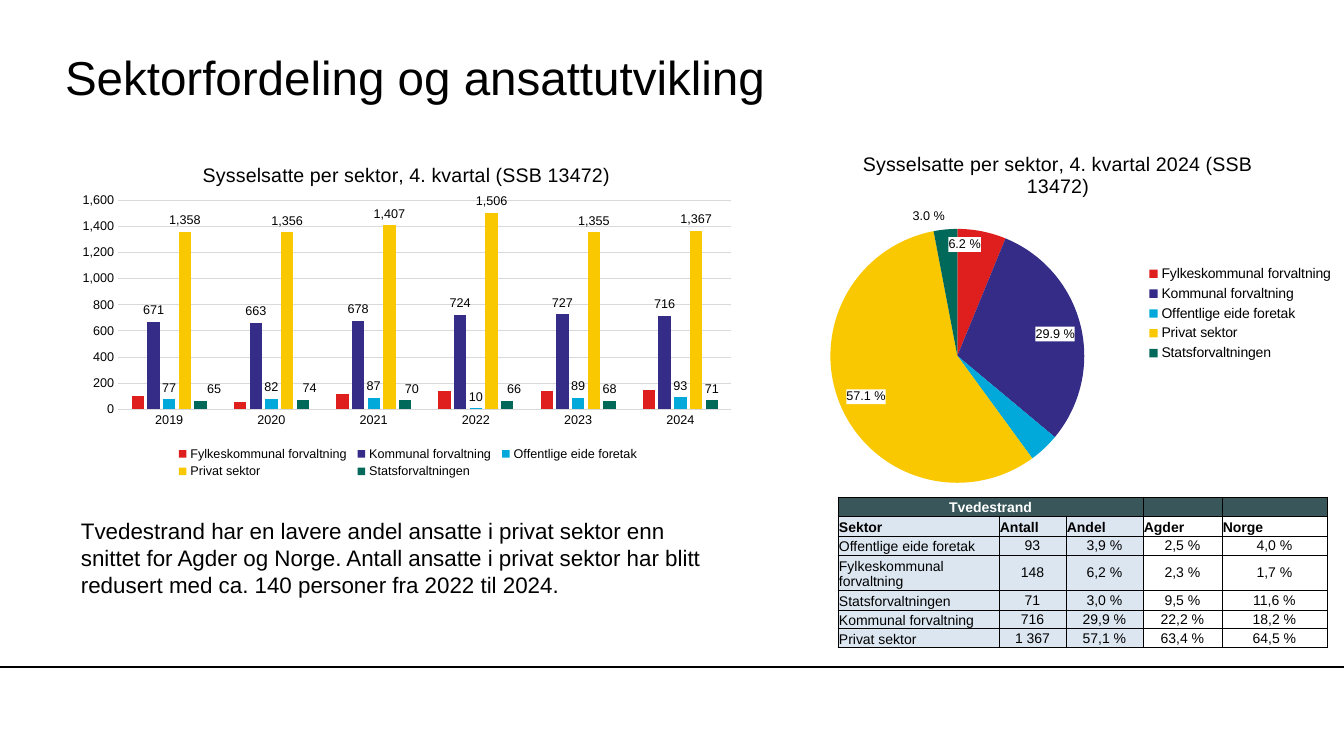
from copy import deepcopy
from dataclasses import dataclass

from pptx import Presentation
from pptx.chart.chart import Chart
from pptx.chart.data import CategoryChartData
from pptx.dml.color import RGBColor
from pptx.enum.chart import XL_CHART_TYPE, XL_LABEL_POSITION, XL_LEGEND_POSITION, XL_TICK_MARK
from pptx.enum.shapes import MSO_CONNECTOR
from pptx.enum.text import MSO_ANCHOR, PP_ALIGN
from pptx.oxml import parse_xml
from pptx.oxml.ns import nsdecls, qn
from pptx.oxml.xmlchemy import OxmlElement
from pptx.util import Emu, Pt

PIXEL = 914400 / 100.8
FONT = "Arial"
COLORS = {"text": "000000", "white": "FFFFFF", "grid": "D9D9D9", "header": "39575B", "tint": "DCE6F1"}
SECTORS = {
    "Fylkeskommunal forvaltning": "DF1F1D",
    "Kommunal forvaltning": "342C86",
    "Offentlige eide foretak": "00A9DA",
    "Privat sektor": "FAC800",
    "Statsforvaltningen": "00695A",
}
YEARS = ["2019", "2020", "2021", "2022", "2023", "2024"]
EMPLOYED = [
    [100, 60, 120, 140, 140, 150],
    [671, 663, 678, 724, 727, 716],
    [77, 82, 87, 10, 89, 93],
    [1358, 1356, 1407, 1506, 1355, 1367],
    [65, 74, 70, 66, 68, 71],
]
STATE_LABEL_SHIFTS = [0.02, 0.01, 0.01, 0.01]
SHARES = [6.2, 29.9, 3.9, 57.1, 3]
TABLE_ROWS = [
    ["Tvedestrand", "", "", "", ""],
    ["Sektor", "Antall", "Andel", "Agder", "Norge"],
    ["Offentlige eide foretak", "93", "3,9 %", "2,5 %", "4,0 %"],
    ["Fylkeskommunal forvaltning", "148", "6,2 %", "2,3 %", "1,7 %"],
    ["Statsforvaltningen", "71", "3,0 %", "9,5 %", "11,6 %"],
    ["Kommunal forvaltning", "716", "29,9 %", "22,2 %", "18,2 %"],
    ["Privat sektor", "1 367", "57,1 %", "63,4 %", "64,5 %"],
]
COLUMN_WIDTHS = [161, 67, 77, 79, 105]
ROW_HEIGHTS = [19, 20, 19, 35, 20, 19, 19]


@dataclass
class Area:
    left: int
    top: int
    width: int
    height: int

    def emu(self) -> list[Emu]:
        return [px(n) for n in (self.left, self.top, self.width, self.height)]


@dataclass
class ChartSpec:
    title: str
    kind: XL_CHART_TYPE
    area: Area
    title_at: dict[str, float]
    plot_at: dict[str, float]
    legend_at: dict[str, float]
    legend_position: XL_LEGEND_POSITION
    legend_size: int


COLUMN_SPEC = ChartSpec(
    "Sysselsatte per sektor, 4. kvartal (SSB 13472)", XL_CHART_TYPE.COLUMN_CLUSTERED, Area(71, 142, 674, 343),
    {"x": 0.19, "y": 0.05}, {"x": 0.07, "y": 0.17, "w": 0.91, "h": 0.61},
    {"x": 0.15, "y": 0.88, "w": 0.7, "h": 0.11}, XL_LEGEND_POSITION.BOTTOM, 9)
PIE_SPEC = ChartSpec(
    "Sysselsatte per sektor, 4. kvartal 2024 (SSB 13472)", XL_CHART_TYPE.PIE, Area(767, 129, 577, 369),
    {"x": 0.16, "y": 0.05}, {"x": 0.11, "y": 0.27, "w": 0.44, "h": 0.69},
    {"x": 0.65, "y": 0.36, "w": 0.34, "h": 0.28}, XL_LEGEND_POSITION.RIGHT, 10)


def px(count: int) -> Emu:
    return Emu(round(count * PIXEL))


def rgb(name: str) -> RGBColor:
    return RGBColor.from_string(COLORS[name])


def style_font(font, size: int, color: str = "text", bold: bool = False) -> None:
    font.name, font.size, font.bold = FONT, Pt(size), bold
    font.color.rgb = rgb(color)


def manual_layout(target: str = "", **fractions: float):
    inner = f'<c:layoutTarget val="{target}"/>' if target else ""
    modes = "" if target == "offset" else '<c:xMode val="edge"/><c:yMode val="edge"/>'
    if target == "offset":
        inner = ""
    values = "".join(f'<c:{key} val="{value}"/>' for key, value in fractions.items())
    return parse_xml(f'<c:layout {nsdecls("c")}><c:manualLayout>{inner}{modes}{values}</c:manualLayout></c:layout>')


def place(part, index: int, layout) -> None:
    """Give a chart part its layout in place of any it has."""
    for old in part.findall(qn("c:layout")):
        part.remove(old)
    part.insert(index, layout)


def add_chart(slide, spec: ChartSpec, data: CategoryChartData) -> Chart:
    chart = slide.shapes.add_chart(spec.kind, *spec.area.emu(), data).chart
    style_font(chart.font, 10)
    chart.has_title = True
    para = chart.chart_title.text_frame.paragraphs[0]
    para.text = spec.title
    style_font(para.font, 14)
    chart.has_legend = True
    chart.legend.position = spec.legend_position
    chart.legend.include_in_layout = False
    style_font(chart.legend.font, spec.legend_size)
    root = chart.element if hasattr(chart, "element") else chart._chartSpace
    place(root.find(f".//{qn('c:title')}"), 1, manual_layout(**spec.title_at))
    place(root.find(f".//{qn('c:plotArea')}"), 0, manual_layout("inner", **spec.plot_at))
    place(root.find(f".//{qn('c:legend')}"), 1, manual_layout(**spec.legend_at))
    return chart


def add_labels(series, number_format: str, position: XL_LABEL_POSITION):
    labels = series.data_labels
    labels.show_value = True
    labels.number_format, labels.number_format_is_linked = number_format, False
    labels.position = position
    style_font(labels.font, 9)
    return labels


def add_point_label(series, index: int, position: XL_LABEL_POSITION):
    """Start a label of one point with the look of its series' labels."""
    series.points[index].data_label.position = position
    labels = series.data_labels._element
    label = next(item for item in labels.findall(qn("c:dLbl")) if item.find(qn("c:idx")).get("val") == str(index))
    for tag in ("c:txPr", "c:spPr", "c:numFmt"):
        for old in label.findall(qn(tag)):
            label.remove(old)
        if labels.find(qn(tag)) is not None:
            label.insert(1, deepcopy(labels.find(qn(tag))))
    return label


def add_column_chart(slide) -> None:
    data = CategoryChartData()
    data.categories = YEARS
    for sector, values in zip(SECTORS, EMPLOYED):
        data.add_series(sector, values)
    chart = add_chart(slide, COLUMN_SPEC, data)
    plot = chart.plots[0]
    plot.gap_width, plot.overlap, plot.vary_by_categories = 219, -27, False
    for axis in (chart.category_axis, chart.value_axis):
        axis.major_tick_mark = axis.minor_tick_mark = XL_TICK_MARK.NONE
        style_font(axis.tick_labels.font, 9)
    grid = chart.value_axis.major_gridlines.format.line
    for line in (chart.category_axis.format.line, grid):
        line.color.rgb, line.width = rgb("grid"), Pt(0.75)
    chart.value_axis.format.line.fill.background()
    chart.value_axis.tick_labels.number_format = "#,##0"
    chart.value_axis.tick_labels.number_format_is_linked = False
    outside = XL_LABEL_POSITION.OUTSIDE_END
    for index, (series, color) in enumerate(zip(plot.series, SECTORS.values())):
        series.format.fill.solid()
        series.format.fill.fore_color.rgb = RGBColor.from_string(color)
        if index:
            add_labels(series, "#,##0", outside)
    for index, shift in enumerate(STATE_LABEL_SHIFTS):
        label = add_point_label(plot.series[-1], index, outside)
        place(label, 1, manual_layout("offset", x=shift, y=0))


def add_pie_chart(slide) -> None:
    data = CategoryChartData()
    data.categories = list(SECTORS)
    data.add_series("Series 1", SHARES)
    plot = add_chart(slide, PIE_SPEC, data).plots[0]
    plot.vary_by_categories = True
    series = plot.series[0]
    for index, color in enumerate(SECTORS.values()):
        fill = series.points[index].format.fill
        fill.solid()
        fill.fore_color.rgb = RGBColor.from_string(color)
    labels = add_labels(series, '0.0" %"', XL_LABEL_POSITION.INSIDE_END)
    white = (f'<c:spPr {nsdecls("c", "a")}><a:solidFill><a:srgbClr val="{COLORS["white"]}"/>'
             '</a:solidFill></c:spPr>')
    labels._element.find(qn("c:numFmt")).addnext(parse_xml(white))
    add_point_label(series, 4, XL_LABEL_POSITION.OUTSIDE_END)
    hidden = add_point_label(series, 2, XL_LABEL_POSITION.INSIDE_END)
    for part in list(hidden)[1:]:
        hidden.remove(part)
    delete = OxmlElement("c:delete")
    delete.set("val", "1")
    hidden.append(delete)


def add_borders(cell) -> None:
    properties = cell._tc.get_or_add_tcPr()
    for index, side in enumerate(("lnL", "lnR", "lnT", "lnB")):
        properties.insert(index, parse_xml(
            f'<a:{side} {nsdecls("a")} w="{Pt(0.5)}"><a:solidFill><a:srgbClr val="{COLORS["text"]}"/>'
            f'</a:solidFill></a:{side}>'))


def fill_cell(cell, text: str, row: int, column: int) -> None:
    cell.margin_left = cell.margin_right = cell.margin_top = px(1)
    cell.margin_bottom = 0
    is_value = row > 1 and column > 0
    cell.vertical_anchor = MSO_ANCHOR.MIDDLE if is_value else MSO_ANCHOR.BOTTOM
    para = cell.text_frame.paragraphs[0]
    para.text = text
    para.alignment = PP_ALIGN.CENTER if is_value or row == 0 else PP_ALIGN.LEFT
    style_font(para.font, 10, "text" if row else "white", bold=row < 2)
    if row and column > 2:
        cell.fill.background()
    else:
        cell.fill.solid()
        cell.fill.fore_color.rgb = rgb("tint" if row else "header")
    add_borders(cell)


def add_sector_table(slide) -> None:
    area = Area(838, 497, sum(COLUMN_WIDTHS), sum(ROW_HEIGHTS))
    table = slide.shapes.add_table(len(ROW_HEIGHTS), len(COLUMN_WIDTHS), *area.emu()).table
    table.first_row = table.horz_banding = False
    for column, width in zip(table.columns, COLUMN_WIDTHS):
        column.width = px(width)
    for row, height in zip(table.rows, ROW_HEIGHTS):
        row.height = px(height)
    for row, texts in enumerate(TABLE_ROWS):
        for column, text in enumerate(texts):
            fill_cell(table.cell(row, column), text, row, column)
    table.cell(0, 0).merge(table.cell(0, 2))


def add_texts(slide) -> None:
    title = slide.shapes.title
    title.left, title.top, title.width, title.height = Area(65, 38, 1119, 76).emu()
    frame = title.text_frame
    frame.margin_left = frame.margin_right = frame.margin_top = frame.margin_bottom = 0
    box = slide.shapes.add_textbox(*Area(71, 512, 660, 92).emu())
    for shape, size, text in (
        (title, 34, "Sektorfordeling og ansattutvikling"),
        (box, 16, "Tvedestrand har en lavere andel ansatte i privat sektor enn snittet for Agder og Norge. "
                  "Antall ansatte i privat sektor har blitt redusert med ca. 140 personer fra 2022 til 2024."),
    ):
        shape.text_frame.word_wrap = True
        para = shape.text_frame.paragraphs[0]
        para.text, para.alignment = text, PP_ALIGN.LEFT
        style_font(para.font, size)
    frame.vertical_anchor = MSO_ANCHOR.MIDDLE


def add_footer_line(slide) -> None:
    line = slide.shapes.add_connector(MSO_CONNECTOR.STRAIGHT, 0, px(667), px(1344), px(667))
    line.line.color.rgb, line.line.width = rgb("text"), Pt(0.75)
    line._element.spPr.append(OxmlElement("a:effectLst"))


def main() -> None:
    deck = Presentation()
    deck.slide_width, deck.slide_height = px(1344), px(756)
    slide = deck.slides.add_slide(deck.slide_layouts[5])
    add_footer_line(slide)
    add_texts(slide)
    add_sector_table(slide)
    add_pie_chart(slide)
    add_column_chart(slide)
    deck.save("out.pptx")


if __name__ == "__main__":
    main()
